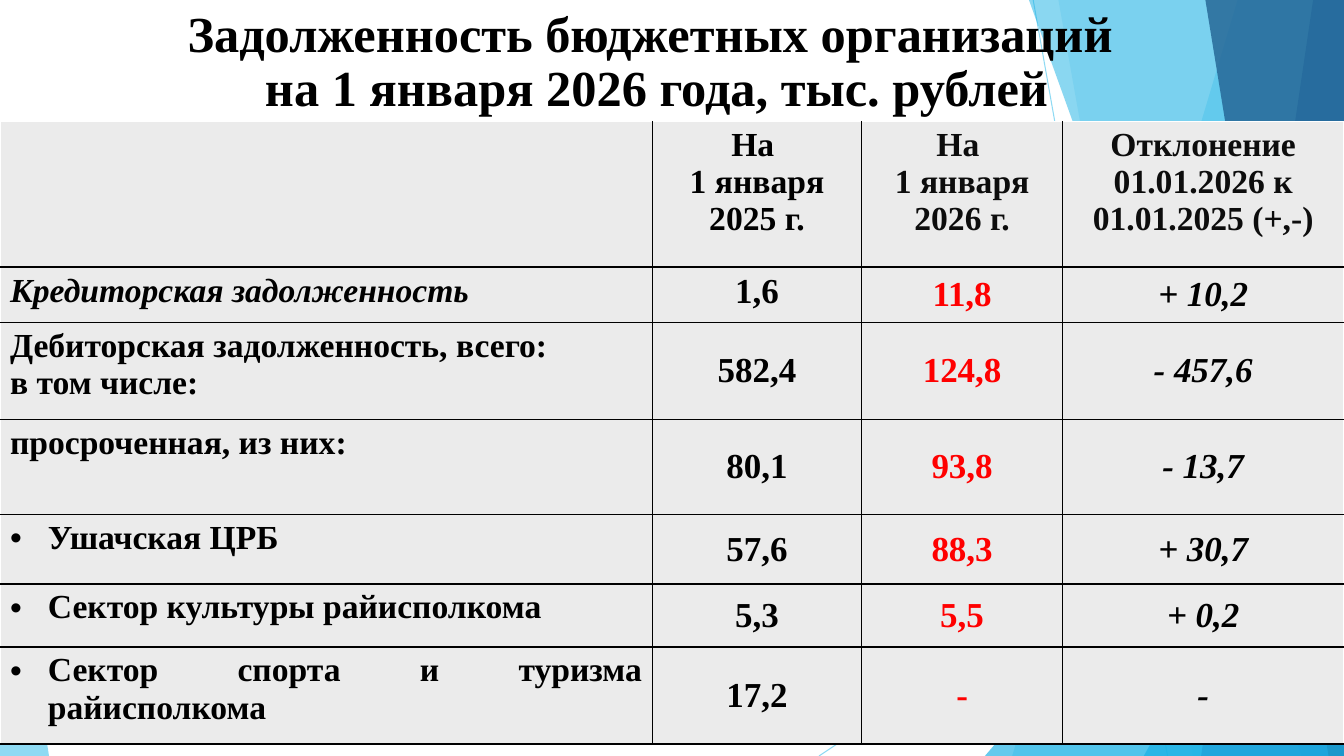
from lxml import etree
from pptx import Presentation
from pptx import util as u
from pptx.dml.color import RGBColor
from pptx.enum import shapes, text
from pptx.oxml import ns

Pt = u.Pt
ALIGN = text.PP_ALIGN
W, H = 960, 540
BLACK, DARK, RED, WHITE, GREY = "000000", "0D0D0D", "FF0000", "FFFFFF", "EBEBEB"
SKY, CYAN, BLUE, NAVY = "5FCBEF", "17B0E4", "2E83C3", "226292"


def rgb(value):
    return RGBColor.from_string(value)


def sub(parent, tag, **attrs):
    return etree.SubElement(parent, ns.qn(tag), attrs)


def set_alpha(fill_parent, percent):
    """Make the solid fill found under the element partly transparent."""
    color = fill_parent.find(ns.qn("a:solidFill"))[0]
    sub(color, "a:alpha", val=str(percent * 1000))


class SlideBuilder:
    font = "Times New Roman"

    def __init__(self, prs):
        self.s = prs.slides.add_slide(prs.slide_layouts[6])

    def line(self, x1, y1, x2, y2, color, alpha):
        c = self.s.shapes.add_connector(
            shapes.MSO_CONNECTOR.STRAIGHT, Pt(x1), Pt(y1), Pt(x2), Pt(y2))
        c.line.width = Pt(0.75)
        c.line.color.rgb = rgb(color)
        spPr = c._element.spPr
        set_alpha(spPr.find(ns.qn("a:ln")), alpha)
        sub(spPr, "a:effectLst")

    def paint(self, sp, color, alpha):
        sp.shadow.inherit = False
        sp.fill.solid()
        sp.fill.fore_color.rgb = rgb(color)
        set_alpha(sp._element.spPr, alpha)
        sp.line.fill.background()

    def band(self, top_x, bottom_x, color, alpha):
        """Full-height facet reaching from a slanted edge to the right side."""
        fb = self.s.shapes.build_freeform(Pt(top_x), 0, scale=1.0)
        fb.add_line_segments(
            [(Pt(W), 0), (Pt(W), Pt(H)), (Pt(bottom_x), Pt(H))], close=True)
        self.paint(fb.convert_to_shape(), color, alpha)

    def triangle(self, x, y, w, apex, color, alpha):
        """Triangle standing on the bottom edge of the slide."""
        sp = self.s.shapes.add_shape(
            shapes.MSO_SHAPE.ISOSCELES_TRIANGLE, Pt(x), Pt(y), Pt(w), Pt(H - y))
        sp.adjustments[0] = apex
        self.paint(sp, color, alpha)

    def add_lines(self, tf, lines, size, color=BLACK, align=ALIGN.CENTER,
                  italic=False, bullet=False, spacing=None):
        for i, line in enumerate(lines):
            p = tf.paragraphs[0] if i == 0 else tf.add_paragraph()
            p.alignment = align
            if spacing:
                p.line_spacing = spacing
            if bullet:
                pPr = p._p.get_or_add_pPr()
                pPr.set("marL", str(Pt(27)))
                pPr.set("indent", str(-Pt(27)))
                sub(pPr, "a:buFont", typeface="Arial")
                sub(pPr, "a:buChar", char="•")
            r = p.add_run()
            r.text = line
            r.font.name = self.font
            r.font.size = Pt(size)
            r.font.bold = True
            r.font.italic = italic
            r.font.color.rgb = rgb(color)

    def title(self, x, y, w, h, lines):
        tf = self.s.shapes.add_textbox(Pt(x), Pt(y), Pt(w), Pt(h)).text_frame
        tf.word_wrap = True
        tf.vertical_anchor = text.MSO_ANCHOR.MIDDLE
        self.add_lines(tf, lines, 36, spacing=0.9)

    def table(self, x, y, widths, heights):
        tbl = self.s.shapes.add_table(
            len(heights), len(widths), Pt(x), Pt(y),
            Pt(sum(widths)), Pt(sum(heights))).table
        tbl.first_row = tbl.horz_banding = False
        for col, w in zip(tbl.columns, widths):
            col.width = Pt(w)
        for row, h in zip(tbl.rows, heights):
            row.height = Pt(h)
        last = len(widths) - 1
        for i, row in enumerate(tbl.rows):
            for j, cell in enumerate(row.cells):
                self.borders(cell, L=WHITE if j == 0 else BLACK,
                             R=WHITE if j == last else BLACK,
                             T=WHITE if i == 0 else BLACK, B=BLACK)
                cell.fill.solid()
                cell.fill.fore_color.rgb = rgb(GREY)
        return tbl

    def borders(self, cell, **sides):
        tcPr = cell._tc.get_or_add_tcPr()
        for side, color in sides.items():
            ln = sub(tcPr, "a:ln" + side, w=str(Pt(1)))
            sub(sub(ln, "a:solidFill"), "a:srgbClr", val=color)

    def cell(self, cell, lines, size, middle=False, **style):
        if middle:
            cell.vertical_anchor = text.MSO_ANCHOR.MIDDLE
        self.add_lines(cell.text_frame, lines, size, **style)


HEADERS = [
    (["На ", "1 января", "2025 г."], BLACK),
    (["На ", "1 января", "2026 г."], DARK),
    (["Отклонение 01.01.2026 к 01.01.2025 (+,-)"], DARK),
]
LEFT, JUSTIFY = ALIGN.LEFT, ALIGN.JUSTIFY
# label lines, label style, values for 2025, 2026 and the deviation
DEBTS = [
    (["Кредиторская задолженность"], dict(align=LEFT, italic=True),
     ["1,6", "11,8", "+ 10,2"]),
    (["Дебиторская задолженность, всего: ", "в том числе:"],
     dict(align=JUSTIFY), ["582,4", "124,8", "- 457,6"]),
    (["просроченная, из них:"], dict(align=JUSTIFY), ["80,1", "93,8", "- 13,7"]),
    (["Ушачская ЦРБ"], dict(align=LEFT, bullet=True), ["57,6", "88,3", "+ 30,7"]),
    (["Сектор культуры райисполкома"], dict(align=JUSTIFY, bullet=True),
     ["5,3", "5,5", "+ 0,2"]),
    (["Сектор спорта и туризма райисполкома"], dict(align=JUSTIFY, bullet=True),
     ["17,2", "-", "-"]),
]
VALUE_STYLES = [dict(), dict(color=RED), dict(italic=True)]


def main():
    prs = Presentation()
    prs.slide_width, prs.slide_height = Pt(W), Pt(H)
    b = SlideBuilder(prs)

    b.line(738, 0, 834, H, SKY, 70)
    b.line(W, 290, 585, H, SKY, 70)
    b.band(884, 723, SKY, 36)
    b.band(756, 852, SKY, 20)
    b.triangle(703.5, 240, 256.5, 1, CYAN, 66)
    b.band(735, 929.5, CYAN, 50)
    b.band(938, 858, BLUE, 70)
    b.band(861, 949, NAVY, 80)
    b.triangle(817, 283, 143, 1, CYAN, 66)
    b.triangle(0, 316, 35, 0, SKY, 70)

    b.title(16.5, 7.2, 905, 75.6,
            ["Задолженность бюджетных организаций ",
             "на 1 января 2026 года, тыс. рублей"])

    tbl = b.table(0, 86.8, [465.8, 149.8, 143.3, 201.1],
                  [104, 39.6, 69.3, 68, 49.5, 45, 69.3])
    for j, (lines, color) in enumerate(HEADERS, 1):
        b.cell(tbl.cell(0, j), lines, 24, color=color)
    for i, (label, label_style, values) in enumerate(DEBTS, 1):
        b.cell(tbl.cell(i, 0), label, 24, **label_style)
        for j, (value, style) in enumerate(zip(values, VALUE_STYLES), 1):
            b.cell(tbl.cell(i, j), [value], 25, middle=(i, j) != (1, 1), **style)

    prs.save("out.pptx")


if __name__ == "__main__":
    main()
